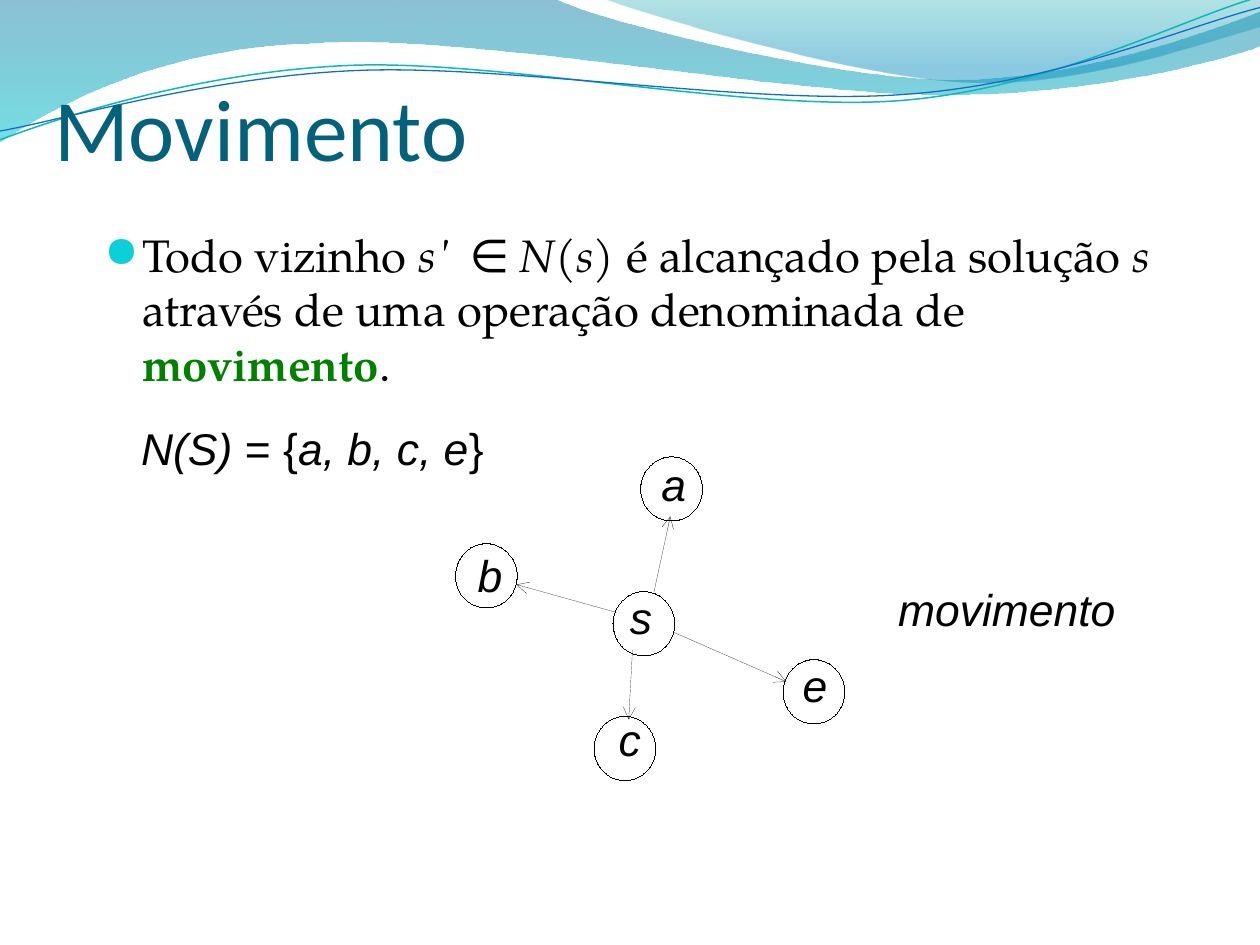
from dataclasses import dataclass

from lxml import etree
from pptx import Presentation
from pptx.dml.color import RGBColor
from pptx.enum.shapes import MSO_CONNECTOR, MSO_SHAPE
from pptx.enum.text import MSO_ANCHOR
from pptx.oxml.ns import qn
from pptx.util import Inches, Pt

STRAIGHT = MSO_CONNECTOR.STRAIGHT
OVAL = MSO_SHAPE.OVAL
TOP, BOTTOM = MSO_ANCHOR.TOP, MSO_ANCHOR.BOTTOM

BLACK = RGBColor(0x00, 0x00, 0x00)
TITLE_TEAL = RGBColor(0x04, 0x61, 0x7B)
GREEN = RGBColor(0x00, 0x80, 0x00)
BULLET_CYAN = RGBColor(0x0B, 0xD0, 0xD9)
DEEP_BLUE = RGBColor(0x00, 0x74, 0xA1)
CYAN = RGBColor(0x00, 0xC6, 0xCF)
SEA_GREEN = RGBColor(0x00, 0xA1, 0xA9)
SKY_BLUE = RGBColor(0x00, 0x8B, 0xBF)
LINE_CYAN = RGBColor(0x0A, 0xB8, 0xBF)
LINE_BLUE = RGBColor(0x0F, 0x6F, 0xC6)

SLIDE_WIDTH, SLIDE_HEIGHT = Inches(10), Inches(7.5)
CELL = SLIDE_WIDTH // 10
NODE_WIDTH, NODE_HEIGHT = 0.49, 0.51
LABEL_WIDTH, LABEL_HEIGHT = 0.34, 0.41
LABEL_SIZE = 25.4

Point = tuple[float, float]


@dataclass
class Stop:
    position: float
    color: RGBColor
    alpha: int


@dataclass
class Wave:
    start: Point
    segments: list[tuple[Point, ...]]
    stops: tuple[Stop, ...] = ()
    line: RGBColor = BLACK
    weight: float = 0


@dataclass
class Node:
    name: str
    center: Point
    label: Point


@dataclass
class Run:
    text: str
    italic: bool = False
    bold: bool = False
    font: str | None = None
    color: RGBColor | None = None
    spacing: float = 0


WAVES = [
    Wave((0, 0), [
        ((4.4, -0.01),),
        ((4.76, 0.17), (6.64, 0.63), (7.58, 0.63)),
        ((8.53, 0.63), (9.58, 0.26), (10, 0.09)),
        ((10.01, 0.36),),
        ((9.83, 0.44), (8.7, 0.76), (7.46, 0.75)),
        ((6.22, 0.75), (3.82, 0.28), (2.57, 0.34)),
        ((1.29, 0.36), (0.46, 0.83), (-0.01, 1.13)),
    ], stops=(Stop(0, DEEP_BLUE, 45), Stop(1, CYAN, 55))),
    Wave((4.79, -0.01), [
        ((5.09, 0.11), (6.82, 0.62), (7.69, 0.65)),
        ((8.56, 0.69), (9.61, 0.32), (10, 0.21)),
        ((10, 0),),
    ], stops=(Stop(0, SEA_GREEN, 30), Stop(0.8, SKY_BLUE, 45))),
    Wave((0, 1.11), [
        ((0.48, 0.93), (1.58, 0.57), (2.77, 0.52)),
        ((3.95, 0.47), (5.93, 0.89), (7.13, 0.8)),
        ((8.33, 0.71), (9.38, 0.15), (9.98, -0.02)),
    ], line=LINE_CYAN, weight=0.85),
    Wave((0, 1.04), [
        ((0.47, 0.96), (1.64, 0.61), (2.83, 0.56)),
        ((4.03, 0.51), (5.97, 0.84), (7.17, 0.75)),
        ((8.36, 0.67), (9.41, 0.21), (10, 0.06)),
    ], line=LINE_BLUE, weight=0.75),
]
NODES = [
    Node("a", (5.33, 3.88), (5.25, 3.63)),
    Node("b", (3.86, 4.57), (3.79, 4.35)),
    Node("c", (4.96, 5.94), (4.91, 5.65)),
    Node("e", (6.46, 5.49), (6.37, 5.22)),
    Node("s", (5.11, 4.95), (5, 4.68)),
]
MOVES = [
    ((5.02, 5.16), (4.99, 5.71)),
    ((4.89, 4.86), (4.1, 4.64)),
    ((5.19, 4.7), (5.32, 4.1)),
    ((5.35, 5.02), (6.24, 5.41)),
]


def grid(*cells: float) -> list[int]:
    return [round(cell * CELL) for cell in cells]


def bend(shape, segments: list[tuple[Point, ...]]) -> None:
    sides = list(shape._element.iter(qn("a:lnTo")))
    for side, segment in zip(sides, segments):
        if len(segment) == 1:
            continue
        side.clear()
        side.tag = qn("a:cubicBezTo")
        for point in segment:
            x, y = grid(*point)
            etree.SubElement(side, qn("a:pt"), x=str(x - shape.left), y=str(y - shape.top))


def curve(side, segment: tuple[Point, ...], left: int, top: int):
    bezier = etree.Element(qn("a:cubicBezTo"))
    for point in segment:
        x, y = grid(*point)
        etree.SubElement(bezier, qn("a:pt"), x=str(x - left), y=str(y - top))
    side.getparent().replace(side, bezier)


def draw_wave(shapes, wave: Wave) -> None:
    builder = shapes.build_freeform(*grid(*wave.start))
    ends = [grid(*segment[-1]) for segment in wave.segments]
    builder.add_line_segments(ends, close=bool(wave.stops))
    shape = builder.convert_to_shape()
    sides = list(shape._element.iter(qn("a:lnTo")))
    for side, segment in zip(sides, wave.segments):
        if len(segment) > 1:
            curve(side, segment, shape.left, shape.top)
    shape.shadow.inherit = False
    if wave.stops:
        shape.line.fill.background()
        shape.fill.gradient()
        shape.fill.gradient_angle = 270
        for target, stop in zip(shape.fill.gradient_stops, wave.stops):
            target.position = stop.position
            target.color.rgb = stop.color
        colors = shape.fill._xPr.iter(qn("a:srgbClr"))
        for color, stop in zip(colors, wave.stops):
            etree.SubElement(color, qn("a:alpha"), val=str(stop.alpha * 1000))
    else:
        shape.fill.background()
        shape.line.color.rgb = wave.line
        shape.line.width = Pt(wave.weight)


def set_hairline(shape) -> None:
    shape.line.color.rgb = BLACK
    shape.line._get_or_add_ln().set("w", "0")


def draw_node(shapes, node: Node) -> None:
    x, y = node.center
    circle = shapes.add_shape(
        OVAL, *grid(x - NODE_WIDTH / 2, y - NODE_HEIGHT / 2, NODE_WIDTH, NODE_HEIGHT))
    circle.shadow.inherit = False
    circle.fill.background()
    set_hairline(circle)


def draw_move(shapes, start: Point, end: Point) -> None:
    arrow = shapes.add_connector(STRAIGHT, *grid(*start, *end))
    set_hairline(arrow)
    etree.SubElement(arrow.line._get_or_add_ln(), qn("a:tailEnd"), type="arrow")
    etree.SubElement(arrow._element.spPr, qn("a:effectLst"))


def write(shapes, box: tuple[float, ...], runs: list[Run], *, size: float = LABEL_SIZE,
          font: str = "Arial", color: RGBColor = BLACK, insets: tuple[float, ...] = (0, 0, 0, 0),
          anchor=TOP, indent: Point = (0, 0), bullet: bool = False) -> None:
    frame = shapes.add_textbox(*grid(*box)).text_frame
    frame.word_wrap = True
    frame.vertical_anchor = anchor
    frame.margin_left, frame.margin_top, frame.margin_right, frame.margin_bottom = grid(*insets)
    paragraph = frame.paragraphs[0]
    margin, first_line = grid(*indent)
    properties = paragraph._p.get_or_add_pPr()
    properties.set("marL", str(margin))
    properties.set("indent", str(first_line))
    if bullet:
        paragraph.space_before = Pt(0.2 * size)
        tint = etree.SubElement(properties, qn("a:buClr"))
        etree.SubElement(tint, qn("a:srgbClr"), val=str(BULLET_CYAN))
        etree.SubElement(properties, qn("a:buSzPct"), val="95000")
        etree.SubElement(properties, qn("a:buFont"), typeface="OpenSymbol")
        etree.SubElement(properties, qn("a:buChar"), char="●")
    for part in runs:
        run = paragraph.add_run()
        run.text = part.text
        run.font.size = Pt(size)
        run.font.name = part.font or font
        run.font.italic = part.italic
        run.font.bold = part.bold
        run.font.color.rgb = part.color or color
        if part.spacing:
            run._r.get_or_add_rPr().set("spc", str(round(part.spacing * 100)))


def main() -> None:
    deck = Presentation()
    deck.slide_width, deck.slide_height = SLIDE_WIDTH, SLIDE_HEIGHT
    shapes = deck.slides.add_slide(deck.slide_layouts[6]).shapes
    for wave in WAVES:
        draw_wave(shapes, wave)
    write(shapes, (0.43, 0.53, 9.32, 0.89), [Run("Movimento")], size=50, font="Calibri",
          color=TITLE_TEAL, insets=(0, 0.05, 0, 0), anchor=BOTTOM)
    write(shapes, (0.73, 1.75, 8.54, 1.41), [
        Run("Todo vizinho "), Run("s'", italic=True), Run(" ", italic=True, spacing=6.5),
        Run("∈ ", italic=True, font="Lato"), Run("N(s)", italic=True),
        Run(" é alcançado pela solução "), Run("s", italic=True),
        Run(" através de uma operação denominada de "),
        Run("movimento", bold=True, color=GREEN), Run("."),
    ], size=26, font="TeX Gyre Pagella", insets=(0.1, 0.05, 0.1, 0.05),
        indent=(0.3, -0.3), bullet=True)
    for start, end in MOVES:
        draw_move(shapes, start, end)
    for node in NODES:
        draw_node(shapes, node)
    for node in NODES:
        write(shapes, (*node.label, LABEL_WIDTH, LABEL_HEIGHT), [Run(node.name, italic=True)])
    write(shapes, (7.03, 4.62, 2.1, LABEL_HEIGHT), [Run(" movimento", italic=True)])
    write(shapes, (1.01, 3.34, 2.9, LABEL_HEIGHT), [
        Run("N(S) ", italic=True), Run("= {"), Run("a, b, c, e", italic=True), Run("}"),
    ], indent=(0.43, -0.32))
    deck.save("out.pptx")


if __name__ == "__main__":
    main()
